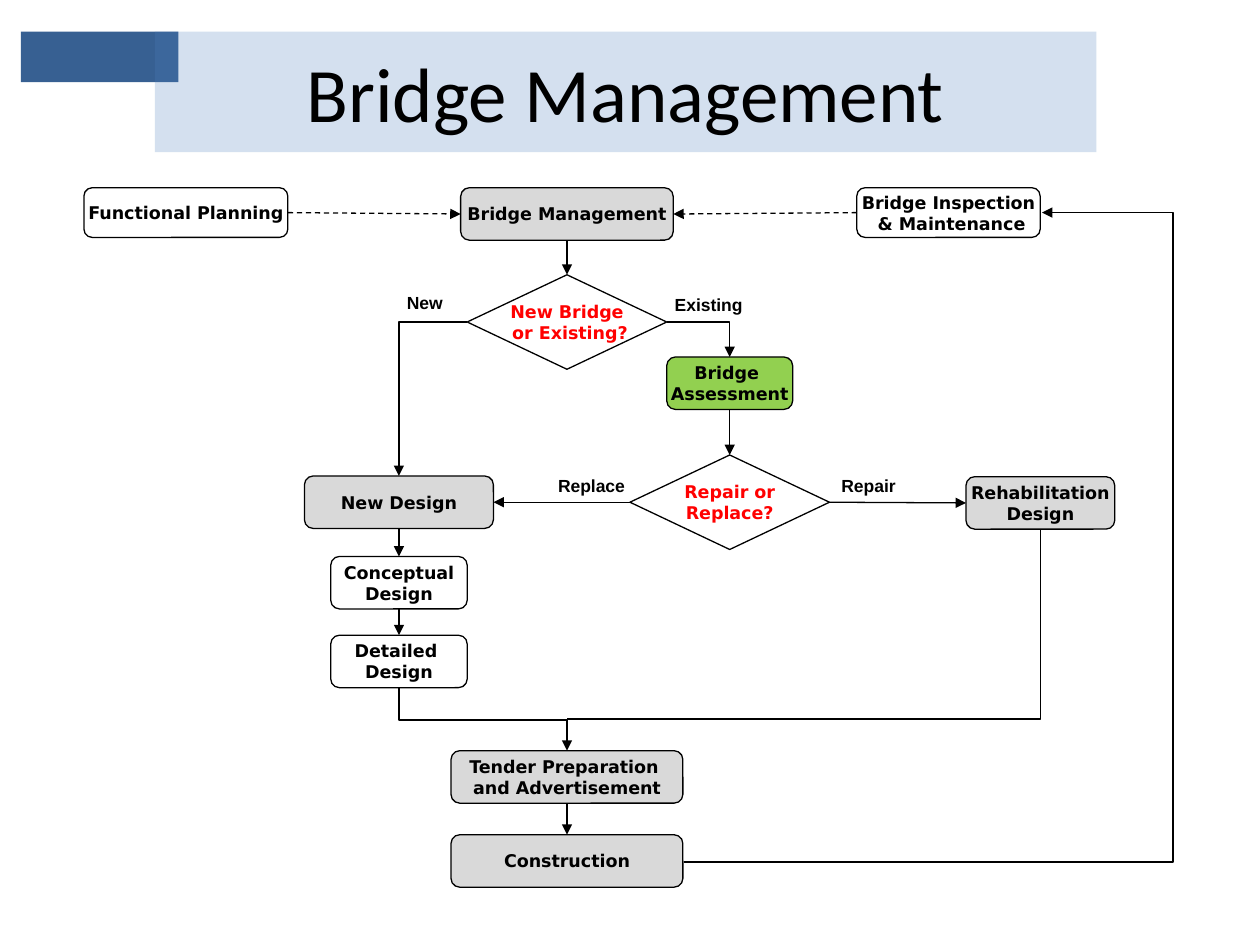
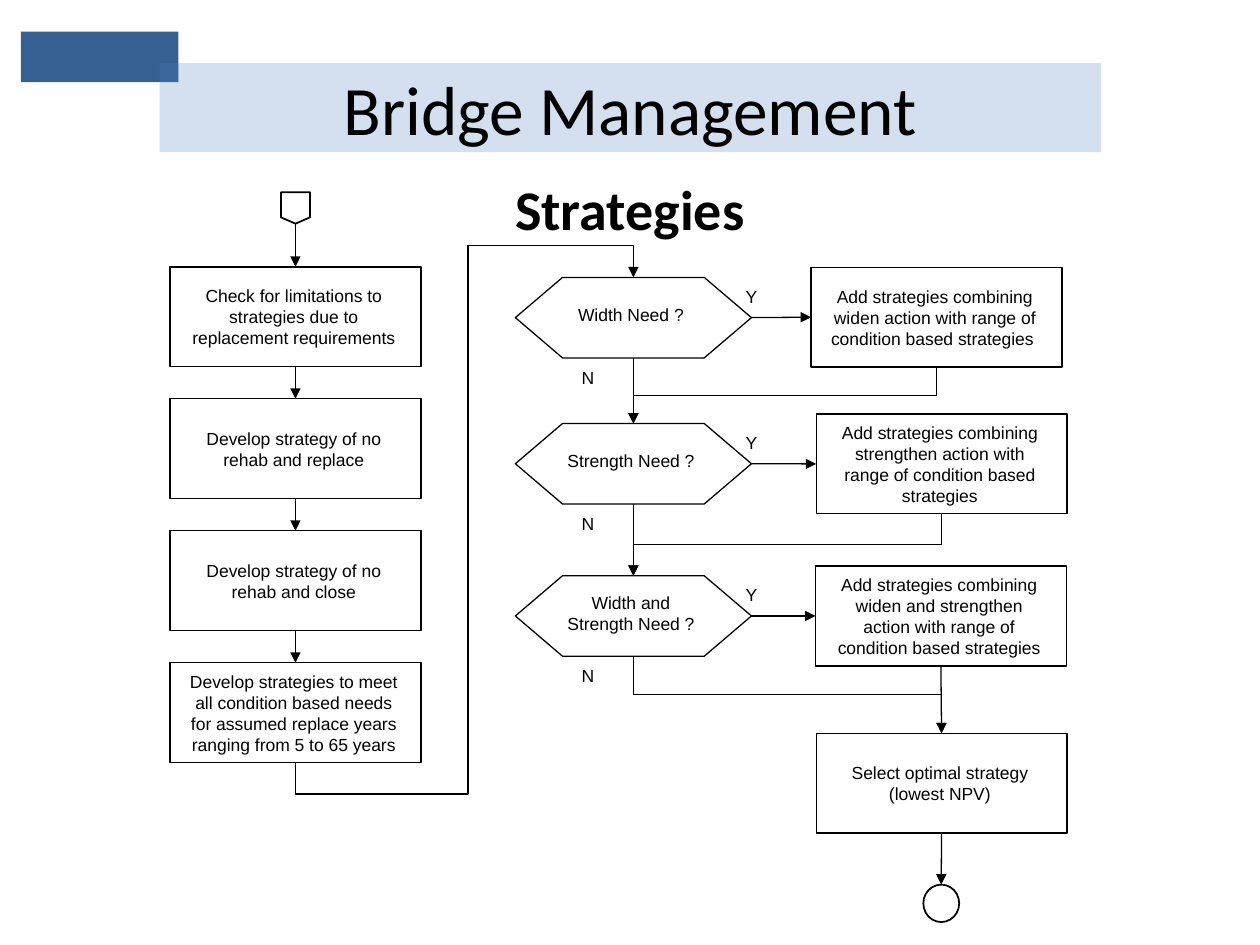
from dataclasses import dataclass

from lxml import etree
from pptx import Presentation
from pptx.dml.color import RGBColor
from pptx.enum.dml import MSO_LINE_DASH_STYLE as Dash
from pptx.enum.shapes import MSO_CONNECTOR as Cxn, MSO_SHAPE as Shape
from pptx.enum.text import MSO_ANCHOR as Anchor, MSO_AUTO_SIZE as AutoSize, PP_ALIGN as Align
from pptx.oxml.ns import qn
from pptx.util import Pt

TOP, LEFT, BOTTOM, RIGHT = range(4)


@dataclass(frozen=True)
class Theme:
    black: str = "000000"
    white: str = "FFFFFF"
    red: str = "FF0000"
    grey: str = "D9D9D9"
    green: str = "92D050"
    accent: str = "376092"
    band: str = "4F81BD"
    band_alpha: int = 24000
    heading_font: str = "Calibri"
    box_font: str = "DejaVu Sans"
    label_font: str = "Arial"
    title_size: float = 44
    small_title_size: float = 39.6
    subtitle_size: float = 32
    text_size: float = 10
    thin: float = 0.75
    medium: float = 1


def color(value):
    return RGBColor.from_string(value)


class Deck:
    def __init__(self, theme):
        self.theme = theme
        self.prs = Presentation()
        self.prs.slide_width, self.prs.slide_height = Pt(720), Pt(540)
        self.s = None

    def slide(self, title, at, size):
        self.s = self.prs.slides.add_slide(self.prs.slide_layouts[5])
        sp = self.s.shapes.title
        sp.left, sp.top, sp.width, sp.height = map(Pt, at)
        sp.fill.solid()
        sp.fill.fore_color.rgb = color(self.theme.band)
        fill = sp.element.spPr.find(qn("a:solidFill"))
        etree.SubElement(fill[0], qn("a:alpha"), val=str(self.theme.band_alpha))
        self.set_text(sp.text_frame, title, self.theme.heading_font, size)

    def master_accent(self, at):
        sp = self.shape(Shape.RECTANGLE, at, self.theme.accent)
        sp.line.fill.background()
        self.prs.slide_master.shapes.element.append(sp.element)

    def set_text(self, tf, text, font, size, ink=None, bold=False,
                 align=Align.CENTER, anchor=Anchor.MIDDLE, wrap=True, fit=AutoSize.NONE):
        tf.text = text
        tf.word_wrap, tf.auto_size, tf.vertical_anchor = wrap, fit, anchor
        for p in tf.paragraphs:
            p.alignment = align
            for r in p.runs:
                r.font.name, r.font.size, r.font.bold = font, Pt(size), bold
                r.font.color.rgb = color(ink or self.theme.black)

    def outline(self, sp, fill=None, width=None):
        sp.shadow.inherit = False
        if fill:
            sp.fill.solid()
            sp.fill.fore_color.rgb = color(fill)
        else:
            sp.fill.background()
        sp.line.color.rgb = color(self.theme.black)
        sp.line.width = Pt(width or self.theme.thin)

    def shape(self, kind, at, fill=None, width=None):
        sp = self.s.shapes.add_shape(kind, *map(Pt, at))
        self.outline(sp, fill, width)
        return sp

    def box(self, text, at, fill=None):
        sp = self.shape(Shape.ROUNDED_RECTANGLE, at, fill)
        self.set_text(sp.text_frame, text, self.theme.box_font, self.theme.text_size,
                      bold=True, wrap=False)
        return sp

    def decision(self, text, at):
        sp = self.shape(Shape.FLOWCHART_DECISION, at, self.theme.white)
        self.set_text(sp.text_frame, text, self.theme.box_font, self.theme.text_size,
                      self.theme.red, bold=True, wrap=False)
        return sp

    def step(self, kind, text, at, insets):
        sp = self.shape(kind, at)
        tf = sp.text_frame
        tf.margin_left, tf.margin_top, tf.margin_right, tf.margin_bottom = map(Pt, insets)
        self.set_text(tf, text, self.theme.label_font, self.theme.text_size)
        return sp

    def process(self, text, x, y):
        return self.step(Shape.FLOWCHART_PROCESS, text, (x, y, 143.3, 57), (9.4, 0, 11.5, 0))

    def question(self, text, x, y):
        return self.step(Shape.FLOWCHART_PREPARATION, text, (x, y, 134.9, 46), (0, 0, 2.9, 3.6))

    def label(self, text, at, bold=False, align=Align.CENTER, size=None, font=None, wrap=False):
        tf = self.s.shapes.add_textbox(*map(Pt, at)).text_frame
        self.set_text(tf, text, font or self.theme.label_font, size or self.theme.text_size,
                      bold=bold, align=align, anchor=Anchor.TOP, wrap=wrap,
                      fit=AutoSize.SHAPE_TO_FIT_TEXT)

    def arrowhead(self, sp):
        ln = sp.element.spPr.find(qn("a:ln"))
        etree.SubElement(ln, qn("a:tailEnd"), type="triangle")

    def connect(self, kind, a, a_side, b, b_side, dashed=False):
        c = self.s.shapes.add_connector(kind, 0, 0, 0, 0)
        c.begin_connect(a, a_side)
        c.end_connect(b, b_side)
        c.line.color.rgb = color(self.theme.black)
        c.line.width = Pt(self.theme.thin)
        if dashed:
            c.line.dash_style = Dash.DASH
        self.arrowhead(c)
        etree.SubElement(c.element.spPr, qn("a:effectLst"))
        return c

    def arrow(self, a, b, a_side=BOTTOM, b_side=TOP, dashed=False):
        return self.connect(Cxn.STRAIGHT, a, a_side, b, b_side, dashed)

    def corner(self, a, a_side, b, b_side):
        c = self.connect(Cxn.ELBOW, a, a_side, b, b_side)
        c.element.spPr.find(qn("a:prstGeom")).set("prst", "bentConnector2")

    def drop(self, a, b, bends=()):
        c = self.connect(Cxn.ELBOW, a, BOTTOM, b, TOP)
        x1, y1, x2, y2 = c.begin_x, c.begin_y, c.end_x, c.end_y
        turn = -1 if x2 > x1 and y2 > y1 else 1
        mid_x, mid_y = (x1 + x2) // 2, (y1 + y2) // 2
        half_x, half_y = turn * (y2 - y1) // 2, turn * (x1 - x2) // 2
        c.begin_x, c.begin_y = mid_x - half_x, mid_y - half_y
        c.end_x, c.end_y = mid_x + half_x, mid_y + half_y
        c.rotation = 90 * turn % 360
        if bends:
            geom = c.element.spPr.find(qn("a:prstGeom"))
            geom.set("prst", "bentConnector5")
            guides = geom.find(qn("a:avLst"))
            if guides is None:
                guides = etree.SubElement(geom, qn("a:avLst"))
            for i, bend in enumerate(bends, 1):
                etree.SubElement(guides, qn("a:gd"), name=f"adj{i}", fmla=f"val {bend}")

    def route(self, points, arrow=True):
        first, *rest = [(Pt(x), Pt(y)) for x, y in points]
        fb = self.s.shapes.build_freeform(*first)
        fb.add_line_segments(rest, close=False)
        sp = fb.convert_to_shape()
        self.outline(sp, width=self.theme.medium)
        if arrow:
            self.arrowhead(sp)


def management_slide(d):
    t = d.theme
    d.slide("Bridge Management", (88.5, 18, 538, 69), t.title_size)
    d.master_accent((12, 18, 90, 29))

    management = d.box("Bridge Management", (263.25, 107.3, 121.5, 30), t.grey)
    new_or_existing = d.decision("New Bridge\n or Existing?", (267, 157, 114, 54))
    new_design = d.box("New Design", (174, 272, 108, 30), t.grey)
    conceptual = d.box("Conceptual\nDesign", (189, 318, 78, 30), t.white)
    detailed = d.box("Detailed \nDesign", (189, 363, 78, 30), t.white)
    tender = d.box("Tender Preparation \nand Advertisement", (257.75, 429, 132.5, 30), t.grey)
    construction = d.box("Construction", (257.75, 477, 132.5, 30), t.grey)
    rehabilitation = d.box("Rehabilitation\nDesign", (552, 272.4, 85, 30), t.grey)
    repair_or_replace = d.decision("Repair or\nReplace?", (360, 260, 114, 54))
    assessment = d.box("Bridge \nAssessment", (381, 204, 72, 30), t.green)
    inspection = d.box("Bridge Inspection\n & Maintenance", (489.6, 107.3, 104.8, 28.4))
    planning = d.box("Functional Planning", (48, 107.3, 116.5, 28.4), t.white)

    for a, b in ((management, new_or_existing), (assessment, repair_or_replace),
                 (new_design, conceptual), (conceptual, detailed), (tender, construction)):
        d.arrow(a, b)
    d.arrow(repair_or_replace, new_design, LEFT, RIGHT)
    d.arrow(repair_or_replace, rehabilitation, RIGHT, LEFT)
    d.arrow(planning, management, RIGHT, LEFT, dashed=True)
    d.arrow(inspection, management, LEFT, RIGHT, dashed=True)
    d.corner(new_or_existing, LEFT, new_design, TOP)
    d.corner(new_or_existing, RIGHT, assessment, TOP)

    d.route([(324, 411), (594.5, 411), (594.5, 302.4)], arrow=False)
    d.route([(228, 393), (228, 411.6), (324, 411.6), (324, 429)])
    d.route([(391, 492.5), (670.5, 492.5), (670.5, 121.5), (595.5, 121.5)])

    for text, x, y, w in (("Repair", 473.7, 268, 46), ("Replace", 311.8, 268, 53),
                          ("Existing", 378.5, 164.4, 53), ("New", 225.4, 163.4, 35)):
        d.label(text, (x, y, w, 19.4), bold=True, align=Align.LEFT)


def strategies_slide(d):
    t = d.theme
    d.slide("Bridge Management", (91.2, 36, 538, 51), t.small_title_size)
    d.label("Strategies", (0, 95.9, 720, 46), bold=True, size=t.subtitle_size,
            font=t.heading_font, wrap=True)

    start = d.shape(Shape.FLOWCHART_OFFPAGE_CONNECTOR, (160.6, 109.8, 16.5, 18), width=t.medium)
    end = d.shape(Shape.FLOWCHART_CONNECTOR, (527.6, 505.5, 20.5, 21.4), width=t.medium)

    previous = start
    for i, text in enumerate((
            "Check for limitations to strategies due to replacement requirements",
            "Develop strategy of no rehab and replace",
            "Develop strategy of no rehab and close",
            "Develop strategies to meet all condition based needs for assumed replace years "
            "ranging from 5 to 65 years")):
        step = d.process(text, 97.2, 152.5 + 75.4 * i)
        d.arrow(previous, step)
        previous = step

    questions, actions = [], []
    for need, action, need_y, x, y in (
            ("Width Need ?", "Add strategies combining widen action with range of "
             "condition based strategies ", 158.5, 463.5, 152.8),
            ("Strength Need ?", "Add strategies combining strengthen action with range of "
             "condition based strategies", 242, 466.4, 236.6),
            ("Width and Strength Need ?", "Add strategies combining widen and strengthen "
             "action with range of condition based strategies", 329, 466, 323.5)):
        question, result = d.question(need, 294.5, need_y), d.process(action, x, y)
        d.arrow(question, result, RIGHT, LEFT)
        d.label("Y", (418.9, need_y + 1.4, 21, 19.4))
        d.label("N", (325.2, need_y + 47.5, 21.6, 19.4))
        questions.append(question)
        actions.append(result)

    select = d.process("Select optimal strategy (lowest NPV)", 466.4, 419)
    d.drop(previous, questions[0], bends=(-6500, 51100, 106500))
    for question, action, following in zip(questions, actions, questions[1:]):
        d.arrow(question, following)
        d.drop(action, following)
    d.drop(questions[-1], select)
    d.arrow(actions[-1], select)
    d.arrow(select, end)


def main():
    d = Deck(Theme())
    management_slide(d)
    strategies_slide(d)
    d.prs.save("out.pptx")


if __name__ == "__main__":
    main()
